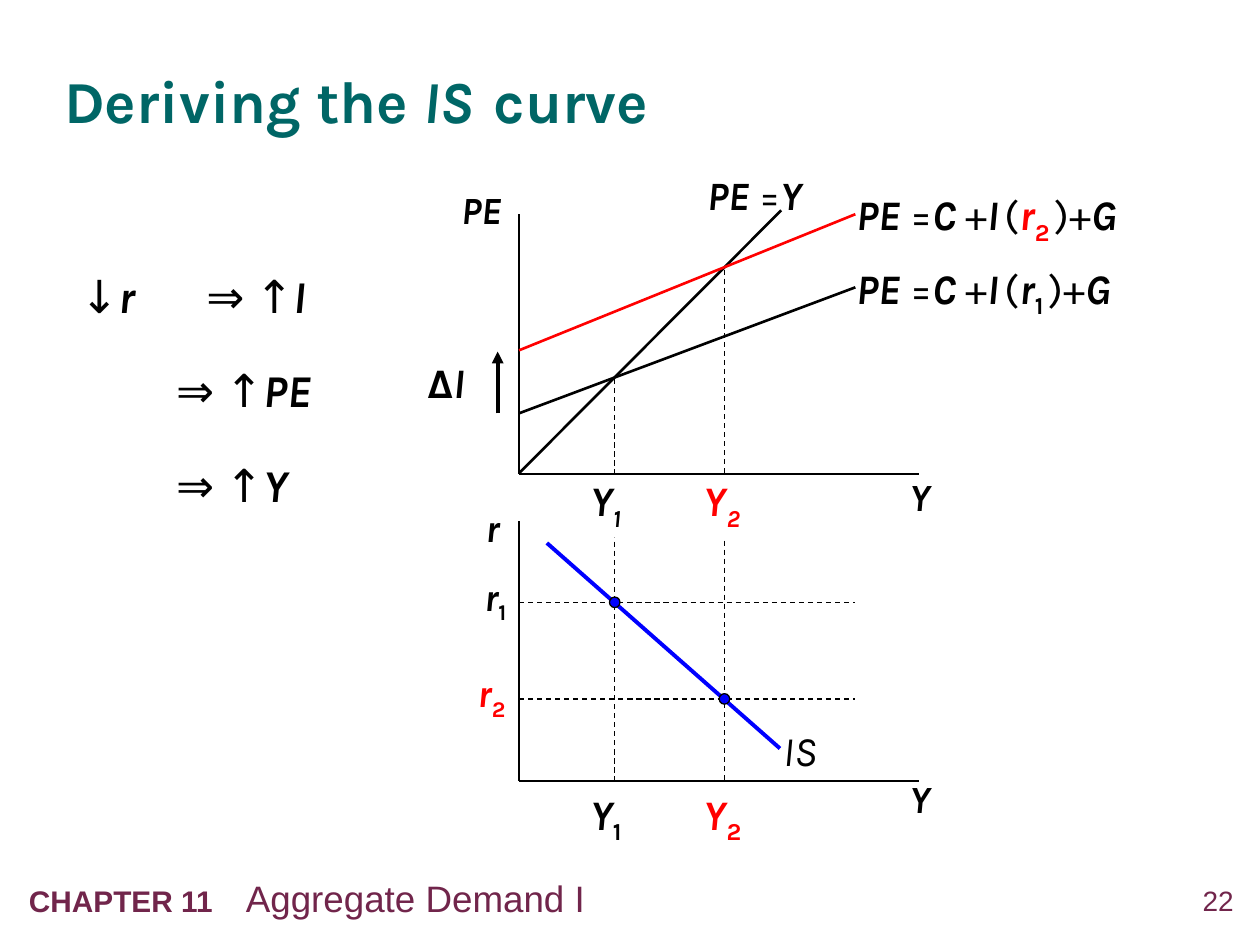
from dataclasses import dataclass

from pptx import Presentation
from pptx.dml.color import RGBColor
from pptx.enum.dml import MSO_LINE
from pptx.enum.shapes import MSO_CONNECTOR, MSO_SHAPE
from pptx.enum.text import MSO_ANCHOR, MSO_AUTO_SIZE, PP_ALIGN
from pptx.oxml.ns import qn
from pptx.util import Pt
from lxml.etree import SubElement

BLACK = RGBColor(0, 0, 0)
WHITE = RGBColor(255, 255, 255)
RED = RGBColor(255, 0, 0)
BLUE = RGBColor(0, 0, 255)
TEAL = RGBColor(0, 0x66, 0x66)
PLUM = RGBColor(0x71, 0x25, 0x4B)

INSETS = (7.2, 3.6, 7.2, 3.6)
Y1, Y2 = 54.7, 117.4            # output levels, from the vertical axis
Y1_LABEL, Y2_LABEL = 37, 102    # left edges of their labels
CURVE_END = 192.2


@dataclass
class Box:
    left: float
    top: float
    width: float
    height: float

    def inner(self, left, top, width, height):
        return Box(self.left + left, self.top + top, width, height)

    def lengths(self):
        return [Pt(round(n, 2)) for n in (self.left, self.top, self.width, self.height)]


def write(para, spans, size, color=BLACK, font="Karla"):
    """Each span is (text, flags[, size]); flags: b bold, i italic, s subscript, r red."""
    for text, flags, *own_size in spans:
        span = para.add_run()
        span.text = text
        span.font.name = font
        span.font.size = Pt(own_size[0] if own_size else size)
        span.font.bold = "b" in flags
        span.font.italic = "i" in flags
        span.font.color.rgb = RED if "r" in flags else color
        if "s" in flags:
            span.font._element.set("baseline", "-25000")


def set_frame(frame, insets, anchor=MSO_ANCHOR.TOP):
    frame.word_wrap = True
    frame.auto_size = MSO_AUTO_SIZE.NONE
    frame.vertical_anchor = anchor
    (frame.margin_left, frame.margin_top,
     frame.margin_right, frame.margin_bottom) = map(Pt, insets)


def set_tab(para, position):
    tabs = SubElement(para._p.get_or_add_pPr(), qn("a:tabLst"))
    SubElement(tabs, qn("a:tab"), pos=str(Pt(position)), algn="l")


def add_label(slide, box, spans, size=24, align=PP_ALIGN.LEFT, insets=INSETS,
              color=BLACK, font="Karla"):
    label = slide.shapes.add_textbox(*box.lengths())
    set_frame(label.text_frame, insets)
    para = label.text_frame.paragraphs[0]
    para.alignment = align
    write(para, spans, size, color, font)
    return label


def add_line(slide, box, start, end, color=BLACK, width=1.5, dashed=False):
    """Draw a line between two points given relative to the box."""
    ends = [Pt(round(n, 2)) for x, y in (start, end)
            for n in (box.left + x, box.top + y)]
    line = slide.shapes.add_connector(MSO_CONNECTOR.STRAIGHT, *ends)
    line.line.color.rgb = color
    line.line.width = Pt(width)
    if dashed:
        line.line.dash_style = MSO_LINE.DASH
    SubElement(line._element.spPr, qn("a:effectLst"))
    return line


def add_title(slide, box):
    title = slide.shapes.title
    title.left, title.top, title.width, title.height = box.lengths()
    set_frame(title.text_frame, (0, 0, 0, 0), MSO_ANCHOR.MIDDLE)
    para = title.text_frame.paragraphs[0]
    para.alignment = PP_ALIGN.LEFT
    para.line_spacing = 1.05
    write(para, [("Deriving the ", "b"), ("IS", "bi"), (" ", "b", 11), (" curve", "b")],
          34, TEAL)


def add_footer(slide, box):
    chapter = add_label(slide, box.inner(0, 0, 589, box.height),
                        [("CHAPTER 11\t", "b", 17), ("Aggregate Demand I", "")],
                        21, color=PLUM, font="Arial")
    set_tab(chapter.text_frame.paragraphs[0], 124)
    add_label(slide, box.inner(box.width - 39.6, 7.9, 39.6, 23), [("22", "")], 16,
              PP_ALIGN.RIGHT, (0, 0, 0, 0), PLUM, "Arial")


def add_reasoning(slide, box):
    """Stack the steps of the argument, each a row of the box."""
    steps = [
        (0, 54, 72, [("↓", ""), ("r", "bi"), ("\t⇒ ↑", ""), ("I", "bi")]),
        (54, 66, 54.7, [("\t⇒ ↑", ""), ("PE", "bi")]),
        (108, 60, 54.7, [("\t⇒ ↑", ""), ("Y", "bi")]),
    ]
    for top, height, tab, spans in steps:
        step = add_label(slide, box.inner(0, top, box.width, height), spans, 26)
        step.fill.solid()
        step.fill.fore_color.rgb = WHITE
        color = step._element.spPr.find(qn("a:solidFill"))[0]
        SubElement(color, qn("a:alpha"), val="50000")
        para = step.text_frame.paragraphs[0]
        para.line_spacing = 1.1
        set_tab(para, tab)


def add_guides(slide, upper, lower):
    """Drop dashed lines from the equilibria down to the lower axis."""
    bottom = lower.top + lower.height - upper.top
    for x, top in ((Y2, 31.7), (Y1, 94.3)):
        add_line(slide, upper, (x, top), (x, bottom), width=0.75, dashed=True)


def add_axes(slide, box, name, name_rise, output_rise):
    origin = (0, box.height)
    add_line(slide, box, (0, 0), origin, width=1)
    add_line(slide, box, origin, (box.width, box.height), width=1)
    add_label(slide, box.inner(216, box.height - output_rise, 41.8, 33.8),
              [("Y", "bi")], 22)
    width = 43.2 if len(name) > 1 else 30.2
    add_label(slide, box.inner(-width, -name_rise, width, 33.8), [(name, "bi")], 22,
              PP_ALIGN.CENTER)


def add_output_labels(slide, box, height, top_inset, subscript):
    for left, number, red in ((Y1_LABEL, "1", ""), (Y2_LABEL, "2", "r")):
        label = add_label(slide, box.inner(left, box.height + 0.5, 36, height),
                          [("Y", "bi" + red), (number, subscript + red)],
                          insets=(3.6, top_inset, 3.6, 7.2))
        label.fill.solid()
        label.fill.fore_color.rgb = WHITE


def add_keynesian_cross(slide, box):
    add_output_labels(slide, box, 36, 0, "bis")
    add_axes(slide, box, "PE", 19.4, 4.3)
    add_line(slide, box, (0.4, 147.6), (149.8, -2.2))
    add_label(slide, box.inner(100.8, -28.8, 93.6, 35.3),
              [("PE ", "bi"), ("=", ""), ("Y", "bi")], 23)

    curves = [("1", "", BLACK, 113.8, 41.8, 23.8), ("2", "r", RED, 77.8, 0, -18)]
    for number, red, color, start, end, label_top in curves:
        add_line(slide, box, (0, start), (CURVE_END, end), color)
        add_label(slide, box.inner(185.8, label_top, 203.8, 36),
                  [("PE ", "bi"), ("=", ""), ("C ", "bi"), ("+", ""), ("I", "bi"),
                   (" ", "bi", 12), ("(", ""), ("r", "bi" + red), (number, "bs" + red),
                   (" ", "bi", 12), (")+", ""), ("G", "bi")])

    add_label(slide, box.inner(-65.5, 77.8, 47.5, 36), [("Δ", "b"), ("I", "bi")],
              align=PP_ALIGN.CENTER)
    shift = add_line(slide, box, (-12.2, 113.8), (-12.2, 78.5), width=2.25)
    SubElement(shift.line._get_or_add_ln(), qn("a:tailEnd"), type="triangle")


def add_is_diagram(slide, box):
    add_output_labels(slide, box, 39.6, 3.6, "bs")
    add_axes(slide, box, "r", 13.7, 7.2)
    rates = [("1", "", Y1, 46.2, -31.6), ("2", "r", Y2, 101.4, -33.8)]
    for number, red, _, y, left in rates:
        add_label(slide, box.inner(left, y - 20.5, 36, 33.8),
                  [("r", "bi" + red), (number, "bs" + red)], 22, PP_ALIGN.CENTER)
        add_line(slide, box, (0, y), (CURVE_END, y), width=0.75, dashed=True)
    add_line(slide, box, (15.9, 12.3), (149.1, 129.7), BLUE, 2.25)
    add_label(slide, box.inner(144, 112.4, 41.8, 36), [("IS", "i")])
    for _, _, x, y, _ in rates:
        dot = slide.shapes.add_shape(MSO_SHAPE.OVAL,
                                     *box.inner(x - 3, y - 3, 6, 6).lengths())
        dot.shadow.inherit = False
        dot.fill.solid()
        dot.fill.fore_color.rgb = BLUE
        dot.line.color.rgb = BLACK
        dot.line.width = Pt(0.75)


def main():
    deck = Presentation()
    deck.slide_width, deck.slide_height = Pt(720), Pt(540)
    slide = deck.slides.add_slide(deck.slide_layouts[5])
    upper = Box(296.6, 122.4, 228.3, 148.4)
    lower = Box(296.6, 298, 228.3, 148.4)
    add_footer(slide, Box(9.4, 496.8, 695.6, 32.4))
    add_title(slide, Box(36.7, 18.7, 649.4, 74.2))
    add_reasoning(slide, Box(38.9, 146.2, 162, 168))
    add_guides(slide, upper, lower)
    add_keynesian_cross(slide, upper)
    add_is_diagram(slide, lower)
    deck.save("out.pptx")


if __name__ == "__main__":
    main()
